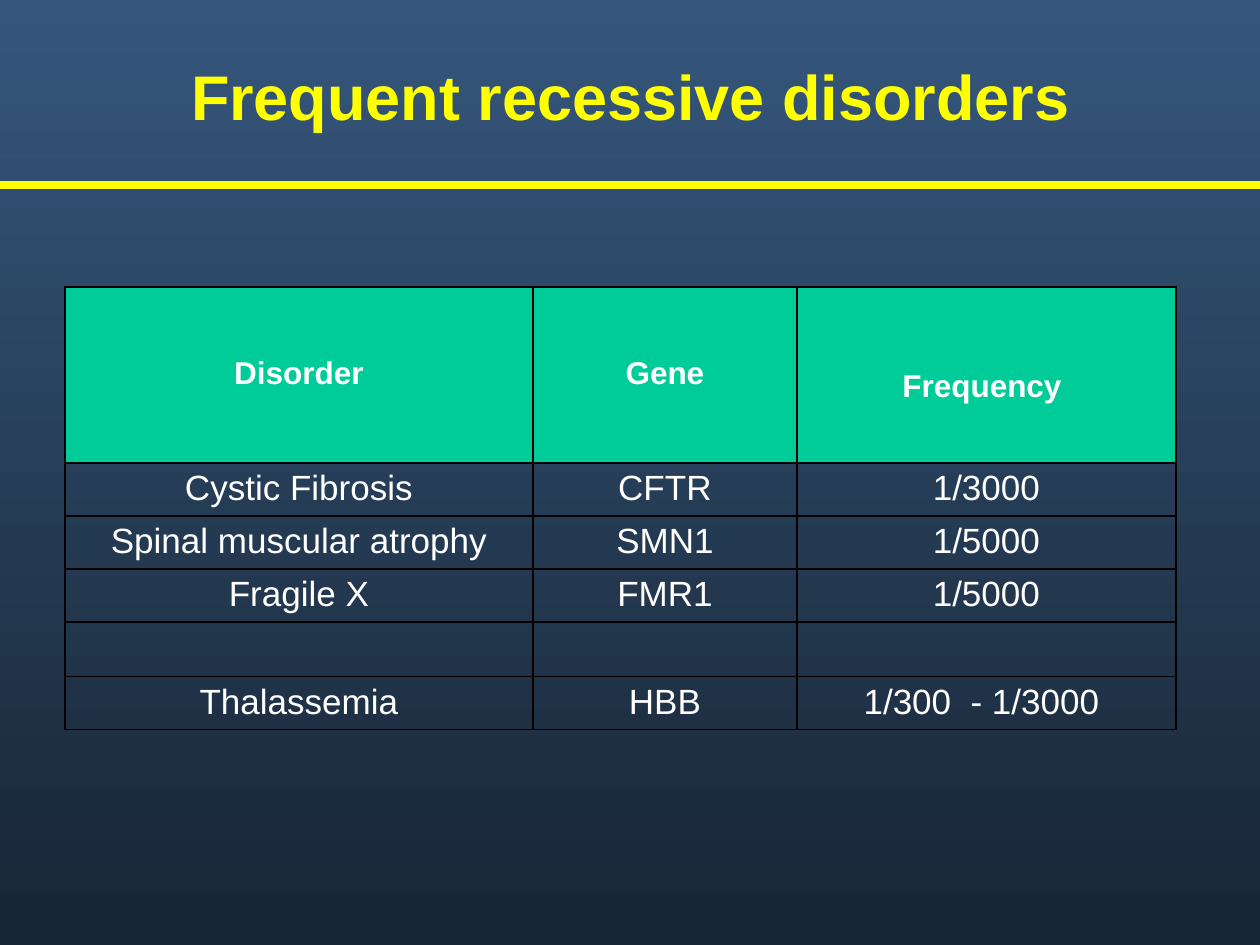
"""Build the slide on frequent recessive disorders."""
import pptx
import pptx.dml.color
import pptx.enum.shapes
import pptx.enum.text
import pptx.oxml
import pptx.oxml.ns
import pptx.util

EMU_PER_PX = 914400 // 126
SLIDE_WIDTH, SLIDE_HEIGHT = 1260, 945
SKY = pptx.dml.color.RGBColor(0x35, 0x57, 0x7C)
NIGHT = pptx.dml.color.RGBColor(0x18, 0x25, 0x35)
YELLOW = pptx.dml.color.RGBColor(0xFF, 0xFF, 0x00)
GREEN = pptx.dml.color.RGBColor(0x00, 0xCC, 0x99)
WHITE = pptx.dml.color.RGBColor(0xFF, 0xFF, 0xFF)
BLACK = pptx.dml.color.RGBColor(0x00, 0x00, 0x00)

DISORDERS = [
    ("Disorder", "Gene", "Frequency "),
    ("Cystic Fibrosis", "CFTR", "1/3000"),
    ("Spinal muscular atrophy", "SMN1", "1/5000"),
    ("Fragile X", "FMR1", "1/5000"),
    ("", "", ""),
    ("Thalassemia", "HBB", "1/300  - 1/3000 "),
]
COLUMN_WIDTHS = (468, 264, 379)
HEADER_HEIGHT, ROW_HEIGHT = 176, 53
FREQUENCY_HEADER_INSET = 32


def px(length):
    return pptx.util.Emu(length * EMU_PER_PX)


def paint_background(slide):
    fill = slide.background.fill
    fill.gradient()
    fill.gradient_angle = 270
    for stop, color in zip(fill.gradient_stops, (SKY, NIGHT)):
        stop.color.rgb = color


def write_centered(frame, text, size, color, bold):
    frame.vertical_anchor = pptx.enum.text.MSO_ANCHOR.MIDDLE
    paragraph = frame.paragraphs[0]
    paragraph.text = text
    paragraph.alignment = pptx.enum.text.PP_ALIGN.CENTER
    paragraph.font.name = "Arial"
    paragraph.font.size = pptx.util.Pt(size)
    paragraph.font.bold = bold
    paragraph.font.color.rgb = color
    return paragraph


def add_title(slide, text):
    title = slide.shapes.add_textbox(px(95), px(-34), px(1071), px(258))
    title.text_frame.word_wrap = True
    write_centered(title.text_frame, text, 36, YELLOW, True)


def add_rule(slide, y):
    rule = slide.shapes.add_connector(
        pptx.enum.shapes.MSO_CONNECTOR.STRAIGHT, 0, px(y), px(SLIDE_WIDTH), px(y))
    rule.line.color.rgb = YELLOW
    rule.line.width = pptx.util.Pt(4.5)
    properties = rule._element.spPr
    properties.append(properties.makeelement(pptx.oxml.ns.qn("a:effectLst"), {}))


def add_borders(cell):
    properties = cell._tc.get_or_add_tcPr()
    for side in ("lnL", "lnR", "lnT", "lnB"):
        properties.append(pptx.oxml.parse_xml(
            f'<a:{side} {pptx.oxml.ns.nsdecls("a")} w="{pptx.util.Pt(1)}">'
            f'<a:solidFill><a:srgbClr val="{BLACK}"/></a:solidFill></a:{side}>'))


def fill_cell(cell, text, is_header):
    cell.vertical_anchor = pptx.enum.text.MSO_ANCHOR.MIDDLE
    paragraph = write_centered(
        cell.text_frame, text, 18 if is_header else 20, WHITE, is_header)
    paragraph.line_spacing = 0.95
    add_borders(cell)
    if is_header:
        cell.fill.solid()
        cell.fill.fore_color.rgb = GREEN
    else:
        cell.fill.background()


def add_disorder_table(slide, left, top):
    row_heights = [HEADER_HEIGHT] + [ROW_HEIGHT] * (len(DISORDERS) - 1)
    table = slide.shapes.add_table(
        len(DISORDERS), len(COLUMN_WIDTHS), px(left), px(top),
        px(sum(COLUMN_WIDTHS)), px(sum(row_heights))).table
    table.first_row = table.horz_banding = False
    for column, width in zip(table.columns, COLUMN_WIDTHS):
        column.width = px(width)
    for index, (row, height) in enumerate(zip(table.rows, row_heights)):
        row.height = px(height)
        for cell, text in zip(row.cells, DISORDERS[index]):
            fill_cell(cell, text, index == 0)
    table.cell(0, 2).margin_top = px(FREQUENCY_HEADER_INSET)


def main():
    deck = pptx.Presentation()
    deck.slide_width, deck.slide_height = px(SLIDE_WIDTH), px(SLIDE_HEIGHT)
    slide = deck.slides.add_slide(deck.slide_layouts[6])
    paint_background(slide)
    add_title(slide, "Frequent recessive disorders")
    add_disorder_table(slide, 65, 287)
    add_rule(slide, 185)
    deck.save("out.pptx")


if __name__ == "__main__":
    main()
